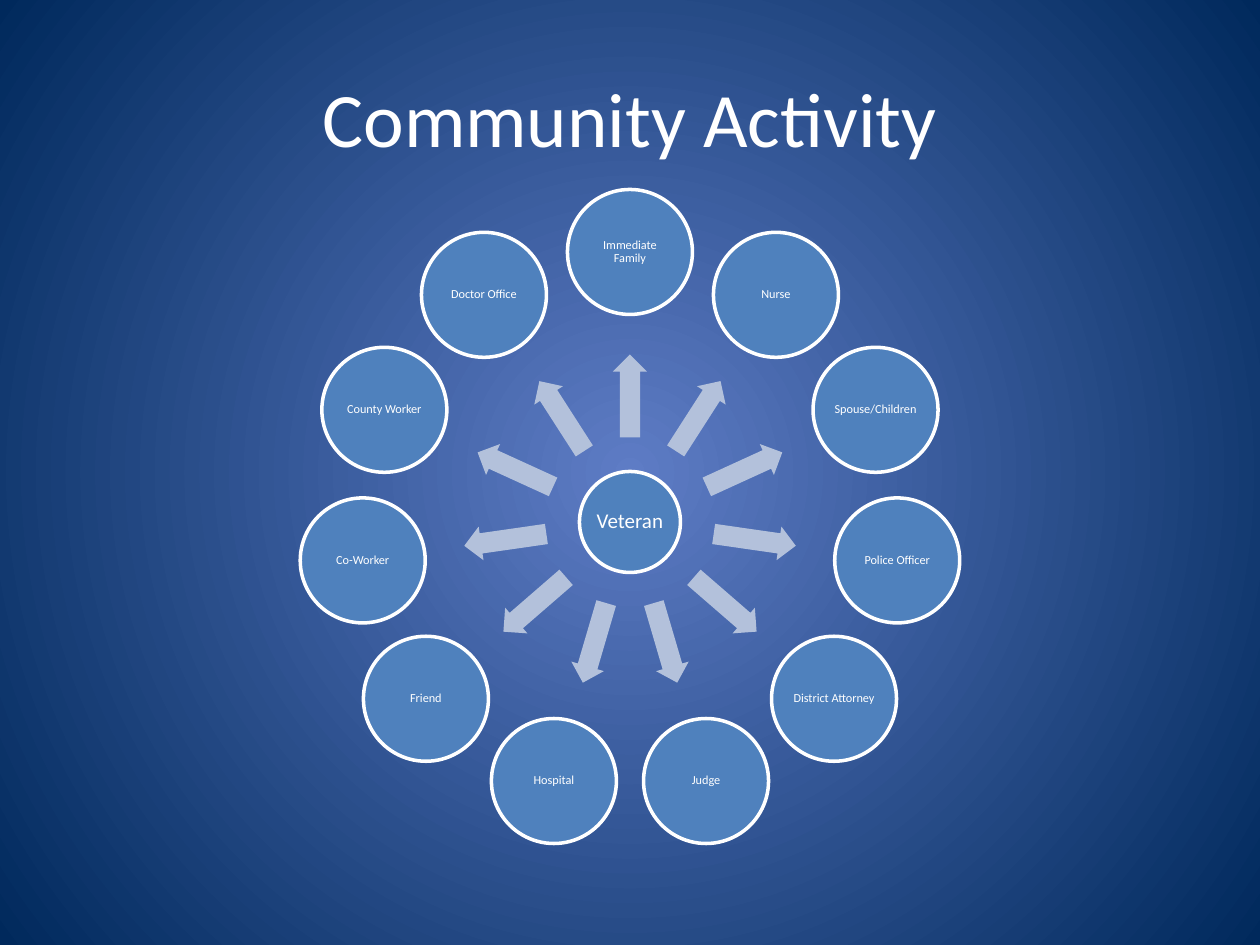
import math

import pptx
import pptx.dml.color
import pptx.enum.shapes
import pptx.enum.text
import pptx.oxml
import pptx.oxml.ns
import pptx.util

SHAPE = pptx.enum.shapes.MSO_SHAPE
SCALE = 914400 / 126
HUB = (630, 522)
RING = 270
SPOKE = 126
ROLES = [
    "Immediate Family", "Nurse", "Spouse/Children", "Police Officer",
    "District Attorney", "Judge", "Hospital", "Friend", "Co-Worker",
    "County Worker", "Doctor Office",
]


def px(n):
    return pptx.util.Emu(round(n * SCALE))


def color(code):
    return pptx.dml.color.RGBColor.from_string(code)


def write(frame, text, size=7, inset=1, space=0.9):
    """Put one centred white paragraph in a text frame."""
    frame.word_wrap = True
    frame.vertical_anchor = pptx.enum.text.MSO_ANCHOR.MIDDLE
    frame.margin_left = frame.margin_right = px(inset)
    frame.margin_top = frame.margin_bottom = px(inset)
    para = frame.paragraphs[0]
    para.alignment = pptx.enum.text.PP_ALIGN.CENTER
    para.line_spacing = space
    run = para.add_run()
    run.text = text
    run.font.name = "Calibri"
    run.font.size = pptx.util.Pt(size)
    run.font.color.rgb = color("FFFFFF")


def backdrop(slide, inner, outer):
    """Fill the background with a radial gradient."""
    fill = slide.background.fill
    fill.gradient()
    for stop, code, place in zip(fill.gradient_stops, (inner, outer), (0, 1)):
        stop.color.rgb = color(code)
        stop.position = place
    grad = slide.element.find(".//" + pptx.oxml.ns.qn("a:gradFill"))
    grad.remove(grad.find(pptx.oxml.ns.qn("a:lin")))
    grad.find(pptx.oxml.ns.qn("a:gsLst")).addnext(pptx.oxml.parse_xml(
        f'<a:path {pptx.oxml.ns.nsdecls("a")} path="circle">'
        '<a:fillToRect l="50000" t="50000" r="50000" b="50000"/></a:path>'))


def title(slide, text):
    box = slide.shapes.add_textbox(px(63), px(38), px(1134), px(157))
    write(box.text_frame, text, size=44, inset=6, space=1)


def shape(slide, kind, mid, width, height, fill):
    """Add a flat shape centred on a point."""
    item = slide.shapes.add_shape(
        kind, px(mid[0] - width / 2), px(mid[1] - height / 2),
        px(width), px(height))
    item.shadow.inherit = False
    item.fill.solid()
    item.fill.fore_color.rgb = color(fill)
    return item


def disc(slide, mid, width, text, **form):
    item = shape(slide, SHAPE.OVAL, mid, width, width, "4F81BD")
    item.line.color.rgb = color("FFFFFF")
    item.line.width = pptx.util.Pt(2)
    write(item.text_frame, text, **form)


def arrow(slide, mid, angle):
    item = shape(slide, SHAPE.RIGHT_ARROW, mid, 83, 34, "B3C1DB")
    item.line.fill.background()
    item.adjustments[0] = 0.6
    item.adjustments[1] = 0.5
    item.rotation = angle % 360


def polar(radius, angle):
    """Give the point at a radius and angle from the hub."""
    turn = math.radians(angle)
    return (HUB[0] + radius * math.cos(turn),
            HUB[1] + radius * math.sin(turn))


def main():
    deck = pptx.Presentation()
    deck.slide_width, deck.slide_height = px(1260), px(945)
    slide = deck.slides.add_slide(deck.slide_layouts[6])
    backdrop(slide, "5E7CC5", "00295C")
    title(slide, "Community Activity")
    disc(slide, HUB, 101, "Veteran", size=12, inset=2)
    for i, role in enumerate(ROLES):
        angle = 360 * i / len(ROLES) - 90
        arrow(slide, polar(SPOKE, angle), angle)
        disc(slide, polar(RING, angle), 125, role)
    deck.save("out.pptx")


if __name__ == "__main__":
    main()
